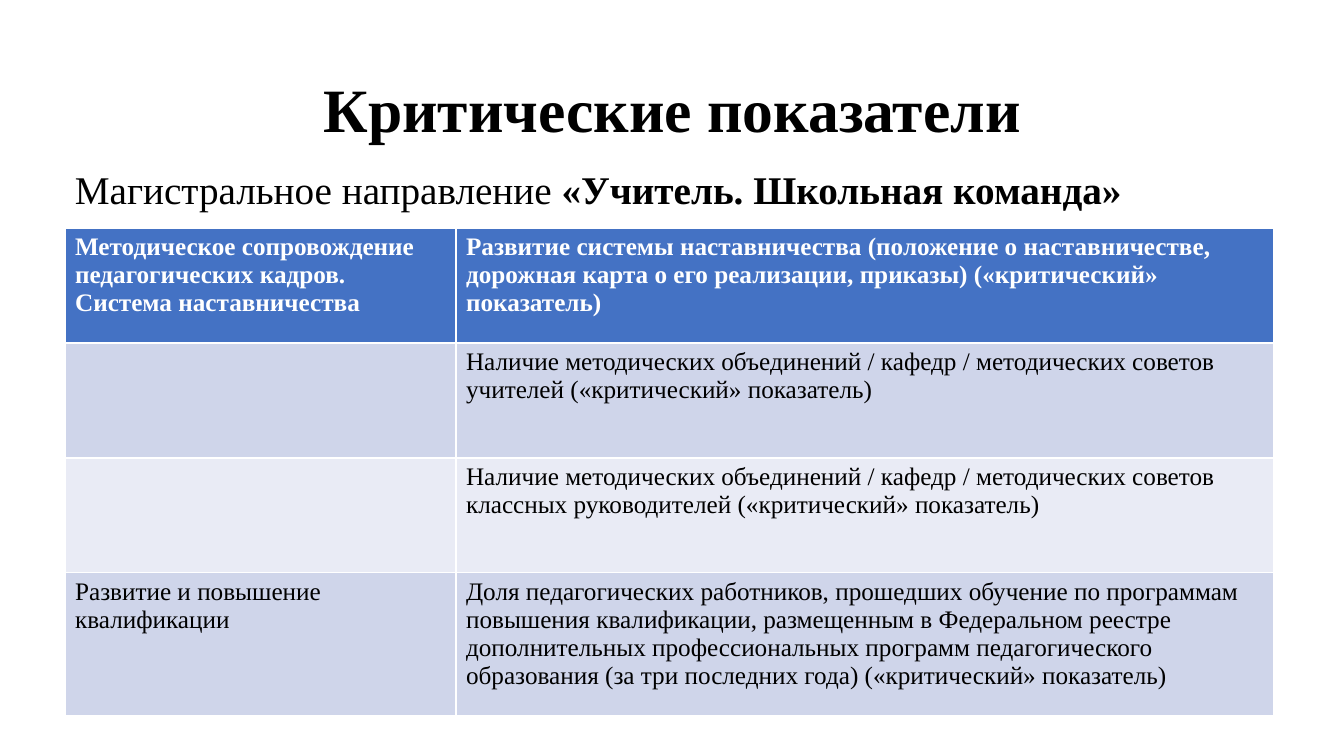
from pptx import Presentation
from pptx import util as u
from pptx.dml import color
from pptx.enum import text

TITLE = [("Критические показатели", True)]
DIRECTION = [
    ("Магистральное направление ", False),
    ("«Учитель. Школьная команда»", True),
]
INDICATORS = [
    ("Методическое сопровождение педагогических кадров. Система наставничества",
     "Развитие системы наставничества (положение о наставничестве, дорожная карта "
     "о его реализации, приказы) («критический» показатель)"),
    ("",
     "Наличие методических объединений / кафедр / методических советов учителей "
     "(«критический» показатель)"),
    ("",
     "Наличие методических объединений / кафедр / методических советов классных "
     "руководителей («критический» показатель)"),
    ("Развитие и повышение квалификации",
     "Доля педагогических работников, прошедших обучение по программам повышения "
     "квалификации, размещенным в Федеральном реестре дополнительных "
     "профессиональных программ педагогического образования (за три последних "
     "года) («критический» показатель)"),
]

THEME = {
    "font": "Times New Roman",
    "title": 44, "direction": 28, "cell": 18,
    "ink": "000000", "header_ink": "FFFFFF", "header": "4472C4",
    "bands": ("E9EBF5", "CFD5EA"),
}
SLIDE_SIZE = (1344, 756)
TITLE_BOX = (93, 40, 1159, 146)
DIRECTION_BOX = (65, 166, 1209, 575)
TABLE_ORIGIN = (65, 228)
COLUMN_WIDTHS = (391, 818)
ROW_HEIGHTS = (115, 115, 115, 143)
PX_PER_INCH = 100.8


def px(length):
    return u.Emu(round(length * 914400 / PX_PER_INCH))


def apply(target, values):
    for name, value in values.items():
        setattr(target, name, value)


def add_runs(paragraph, runs, size, ink):
    for content, bold in runs:
        run = paragraph.add_run()
        run.text = content
        apply(run.font, {"name": THEME["font"], "size": u.Pt(size), "bold": bold})
        run.font.color.rgb = color.RGBColor.from_string(ink)


def add_text(slide, box, runs, size, anchor, paragraph_format):
    frame = slide.shapes.add_textbox(*map(px, box)).text_frame
    apply(frame, {"word_wrap": True, "vertical_anchor": anchor})
    paragraph = frame.paragraphs[0]
    apply(paragraph, {"line_spacing": 0.9, **paragraph_format})
    add_runs(paragraph, runs, size, THEME["ink"])


def add_indicator_table(slide):
    size = (sum(COLUMN_WIDTHS), sum(ROW_HEIGHTS))
    table = slide.shapes.add_table(
        len(ROW_HEIGHTS), len(COLUMN_WIDTHS), *map(px, TABLE_ORIGIN + size)
    ).table
    for column, width in zip(table.columns, COLUMN_WIDTHS):
        column.width = px(width)
    for index, (row, height) in enumerate(zip(table.rows, ROW_HEIGHTS)):
        row.height = px(height)
        header = index == 0
        fill = THEME["header"] if header else THEME["bands"][index % 2]
        ink = THEME["header_ink"] if header else THEME["ink"]
        for cell, content in zip(row.cells, INDICATORS[index]):
            cell.fill.solid()
            cell.fill.fore_color.rgb = color.RGBColor.from_string(fill)
            if content:
                add_runs(cell.text_frame.paragraphs[0], [(content, header)],
                         THEME["cell"], ink)


def main():
    presentation = Presentation()
    width, height = map(px, SLIDE_SIZE)
    apply(presentation, {"slide_width": width, "slide_height": height})
    slide = presentation.slides.add_slide(presentation.slide_layouts[6])
    add_text(slide, TITLE_BOX, TITLE, THEME["title"], text.MSO_ANCHOR.MIDDLE,
             {"alignment": text.PP_ALIGN.CENTER})
    add_text(slide, DIRECTION_BOX, DIRECTION, THEME["direction"],
             text.MSO_ANCHOR.TOP, {"space_before": u.Pt(10)})
    add_indicator_table(slide)
    presentation.save("out.pptx")


if __name__ == "__main__":
    main()
